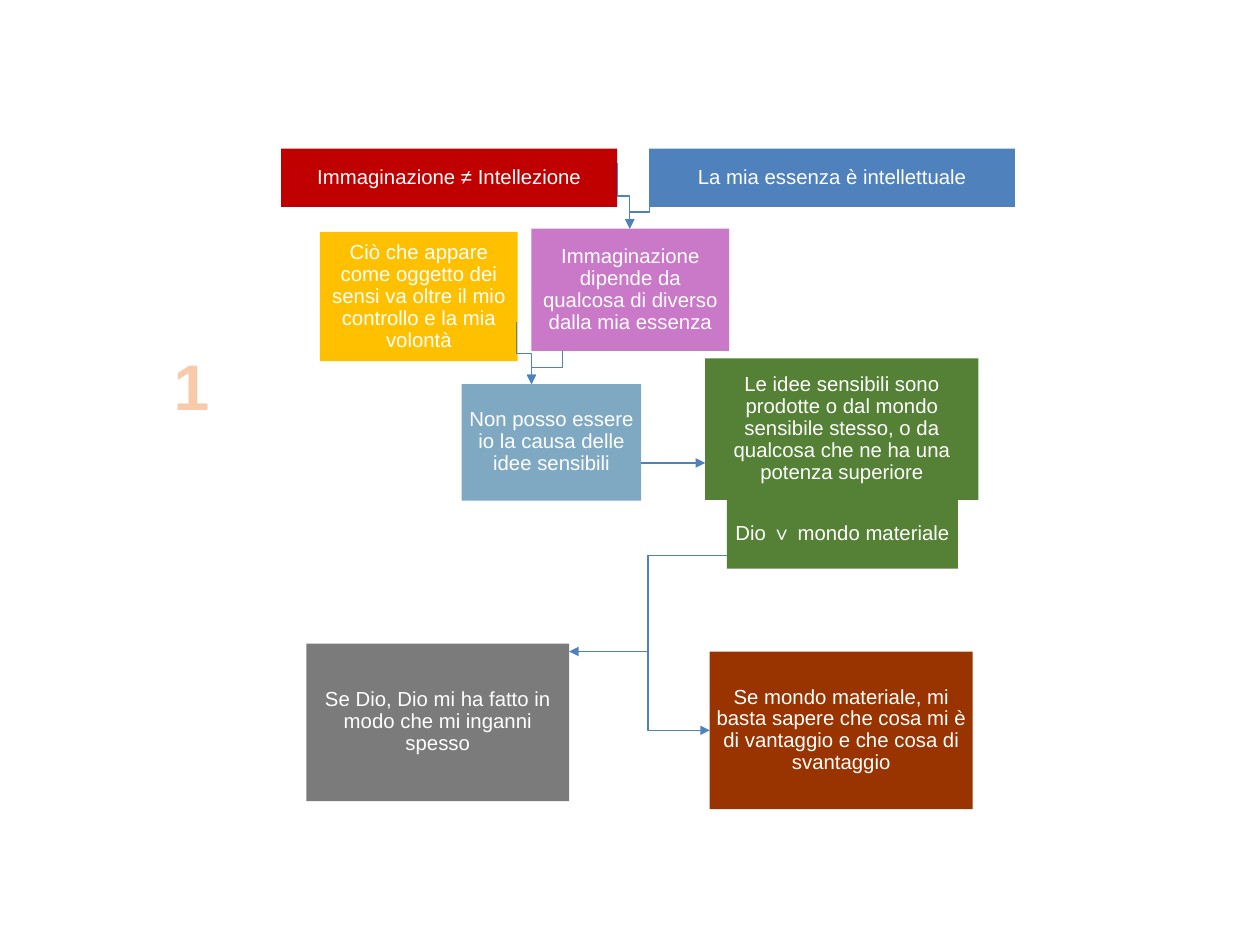
"""Draw the argument map on imagination, sensible ideas and their cause."""
from dataclasses import dataclass
from typing import Any

import lxml.etree
import pptx
import pptx.dml.color
import pptx.enum.shapes
import pptx.enum.text
import pptx.oxml.ns
import pptx.util

WIDTH, HEIGHT = pptx.util.Cm(28), pptx.util.Cm(21)
CELL = pptx.util.Inches(0.1)


@dataclass(frozen=True)
class Theme:
    """Colours, font and type sizes."""
    red: str = "C00000"
    blue: str = "4F81BD"
    violet: str = "C979C7"
    yellow: str = "FFC000"
    sky: str = "7FA9C3"
    green: str = "548135"
    grey: str = "7B7B7B"
    brown: str = "993300"
    peach: str = "F7CAAC"
    white: str = "FFFFFF"
    font: str = "Arial"
    body: float = 12.8
    number: float = 40.5
    line: float = 0.75


THEME = Theme()


@dataclass(frozen=True)
class Claim:
    """A filled box, placed in grid columns and rows."""
    text: str
    fill: str
    column: float
    row: float
    columns: float
    rows: float


@dataclass(frozen=True)
class Arrow:
    """An arrow between two grid points."""
    start: tuple[float, float]
    end: tuple[float, float]
    kind: str = "bentConnector3"
    downward: bool = False


CLAIMS = (
    Claim("Immaginazione ≠ Intellezione", THEME.red, 24.6, 13, 29.4, 5.1),
    Claim("La mia essenza è intellettuale", THEME.blue, 56.8, 13, 32, 5.1),
    Claim("Immaginazione dipende da qualcosa di diverso dalla mia essenza",
          THEME.violet, 46.5, 20, 17.3, 10.7),
    Claim("Ciò che appare come oggetto dei sensi va oltre il mio controllo e la mia volontà",
          THEME.yellow, 28, 20.3, 17.3, 11.3),
    Claim("Non posso essere io la causa delle idee sensibili",
          THEME.sky, 40.4, 33.6, 15.7, 10.2),
    Claim("Dio ∨ mondo materiale", THEME.green, 63.6, 43.75, 20.2, 6),
    Claim("Le idee sensibili sono prodotte o dal mondo sensibile stesso, "
          "o da qualcosa che ne ha una potenza superiore",
          THEME.green, 61.7, 31.35, 23.9, 12.4),
    Claim("Se Dio, Dio mi ha fatto in modo che mi inganni spesso",
          THEME.grey, 26.8, 56.3, 23, 13.8),
    Claim("Se mondo materiale, mi basta sapere che cosa mi è di vantaggio "
          "e che cosa di svantaggio", THEME.brown, 62.1, 57, 23, 13.8),
)

ARROWS = (
    Arrow((54, 14.3), (55.1, 20), downward=True),
    Arrow((56.8, 17.1), (55.1, 20), downward=True),
    Arrow((49.2, 30.7), (46.5, 33.6), downward=True),
    Arrow((45.2, 28.2), (46.5, 33.6), downward=True),
    Arrow((56.1, 40.5), (61.7, 40.5), kind="line"),
    Arrow((63.6, 48.6), (49.8, 57)),
    Arrow((56.7, 52.1), (62.1, 63.9), kind="bentConnector2", downward=True),
)


def grid(*cells: float) -> list[int]:
    """Turn grid cells into slide lengths."""
    return [round(cell * CELL) for cell in cells]


def write(box: Any, text: str, *, size: float, color: str, bold: bool = False,
          spacing: float = 0.9, insets: tuple[float, float] = (0.5, 0.5),
          anchor: Any = pptx.enum.text.MSO_ANCHOR.MIDDLE) -> None:
    """Write one centred paragraph into a box."""
    frame = box.text_frame
    frame.word_wrap = True
    frame.vertical_anchor = anchor
    across, down = grid(*insets)
    frame.margin_left = frame.margin_right = across
    frame.margin_top = frame.margin_bottom = down
    para = frame.paragraphs[0]
    para.alignment = pptx.enum.text.PP_ALIGN.CENTER
    para.line_spacing = spacing
    span = para.add_run()
    span.text = text
    span.font.name = THEME.font
    span.font.size = pptx.util.Pt(size)
    span.font.bold = bold
    span.font.color.rgb = pptx.dml.color.RGBColor.from_string(color)


def draw_claim(page: Any, claim: Claim) -> None:
    """Draw a filled box with its text."""
    box = page.shapes.add_shape(
        pptx.enum.shapes.MSO_SHAPE.RECTANGLE,
        *grid(claim.column, claim.row, claim.columns, claim.rows))
    box.shadow.inherit = False
    box.fill.solid()
    box.fill.fore_color.rgb = pptx.dml.color.RGBColor.from_string(claim.fill)
    box.line.fill.background()
    write(box, claim.text, size=THEME.body, color=THEME.white)


def draw_arrow(page: Any, arrow: Arrow) -> None:
    """Draw an arrow, turning its frame when it leaves downward."""
    (left, top), (right, bottom) = arrow.start, arrow.end
    ends = (left, top, right, bottom)
    turn = -1 if right > left else 1
    if arrow.downward:
        middle, centre = (left + right) / 2, (top + bottom) / 2
        across, down = turn * (bottom - top) / 2, turn * (right - left) / 2
        ends = (middle - across, centre + down, middle + across, centre - down)
    connector = page.shapes.add_connector(
        pptx.enum.shapes.MSO_CONNECTOR.ELBOW, *grid(*ends))
    connector.line.color.rgb = pptx.dml.color.RGBColor.from_string(THEME.blue)
    connector.line.width = pptx.util.Pt(THEME.line)
    qn = pptx.oxml.ns.qn
    properties = connector._element.spPr
    properties.find(qn("a:prstGeom")).set("prst", arrow.kind)
    if arrow.downward:
        properties.find(qn("a:xfrm")).set("rot", str(turn * 90 % 360 * 60000))
    lxml.etree.SubElement(properties.find(qn("a:ln")), qn("a:tailEnd"), type="triangle")
    lxml.etree.SubElement(properties, qn("a:effectLst"))


def main() -> None:
    """Build and save the slide."""
    deck = pptx.Presentation()
    deck.slide_width, deck.slide_height = WIDTH, HEIGHT
    page = deck.slides.add_slide(deck.slide_layouts.get_by_name("Blank"))
    for claim in CLAIMS:
        draw_claim(page, claim)
    for arrow in ARROWS:
        draw_arrow(page, arrow)
    number = page.shapes.add_textbox(*grid(14.4, 30.5, 4.7, 7.1))
    write(number, "1", size=THEME.number, color=THEME.peach, bold=True, spacing=0.93,
          insets=(0.8, 0.4), anchor=pptx.enum.text.MSO_ANCHOR.TOP)
    deck.save("out.pptx")


if __name__ == "__main__":
    main()
